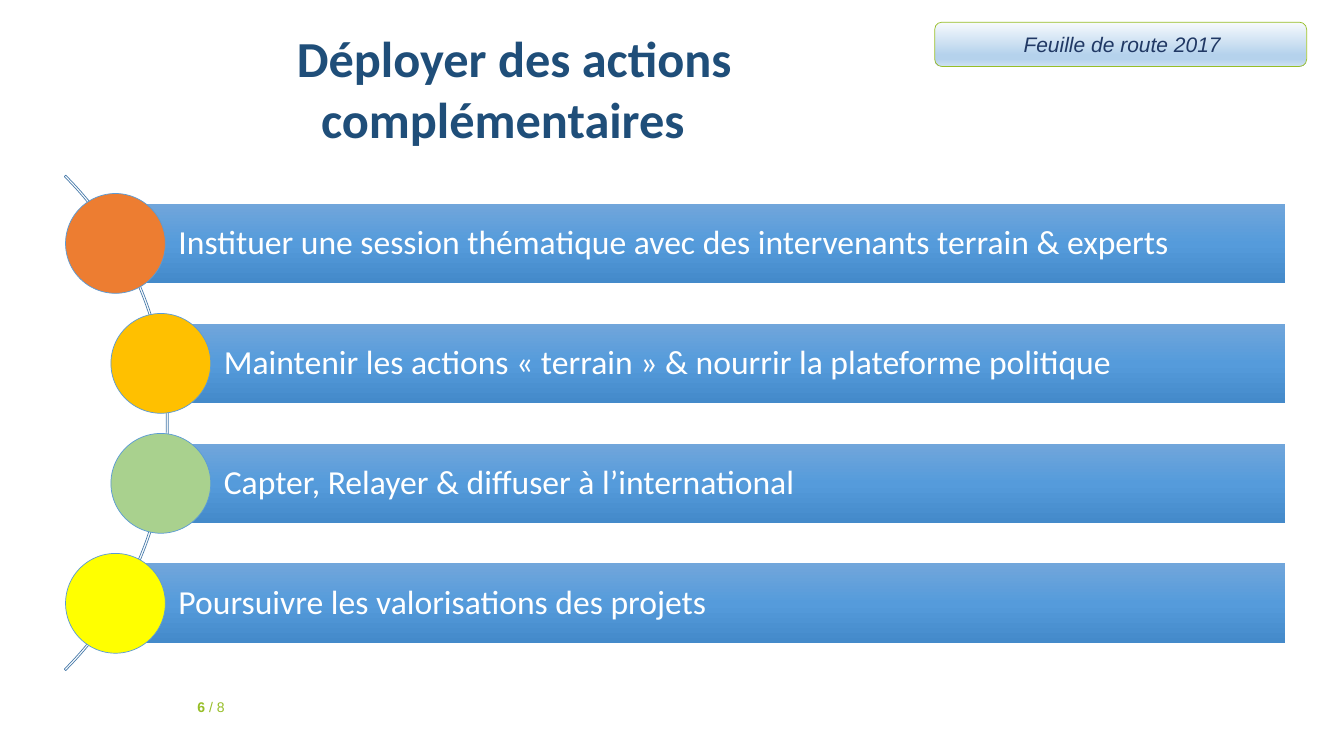
from copy import deepcopy

from pptx import Presentation
from pptx.dml.color import RGBColor
from pptx.enum.shapes import MSO_SHAPE as SHAPE
from pptx.enum.text import MSO_ANCHOR as ANCHOR, MSO_AUTO_SIZE as AUTO, PP_ALIGN as ALIGN
from pptx.util import Pt

PX = 9144  # 100 px to the inch


def rgb(color):
    return RGBColor.from_string(color)


def set_gradient(fill, stops):
    """Fill from top to bottom with (position in percent, colour) stops."""
    fill.gradient()
    fill.gradient_angle = 270
    gs_list = fill._fill._gradFill.gsLst
    while len(gs_list) < len(stops):
        gs_list.append(deepcopy(gs_list[0]))
    for stop, (position, color) in zip(fill.gradient_stops, stops):
        stop.position = position / 100
        stop.color.rgb = rgb(color)


prs = Presentation()
prs.slide_width, prs.slide_height = 1333 * PX, 750 * PX
slide = prs.slides.add_slide(prs.slide_layouts[6])
shapes = slide.shapes

# Page number
tf = shapes.add_textbox(186 * PX, 689 * PX, 71 * PX, 26 * PX).text_frame
tf.word_wrap = True
tf.auto_size = AUTO.SHAPE_TO_FIT_TEXT
tf.margin_top = tf.margin_bottom = 4 * PX
for text, bold in (("6", True), (" / 8", False)):
    r = tf.paragraphs[0].add_run()
    r.text = text
    r.font.name, r.font.size, r.font.bold = "Arial", Pt(10), bold
    r.font.color.rgb = rgb("97BE27")

# Title
tf = shapes.add_textbox(186 * PX, 22 * PX, 637 * PX, 131 * PX).text_frame
tf.word_wrap = True
tf.auto_size = AUTO.SHAPE_TO_FIT_TEXT
p = tf.paragraphs[0]
p.alignment = ALIGN.CENTER
r = p.add_run()
r.text = " Déployer des actions complémentaires "
r.font.name, r.font.size, r.font.bold = "Calibri", Pt(36), True
r.font.color.rgb = rgb("1F4E79")

# Roadmap badge
badge = shapes.add_shape(SHAPE.ROUNDED_RECTANGLE, 927 * PX, 22 * PX, 369 * PX, 44 * PX)
badge.shadow.inherit = False
set_gradient(badge.fill, [(0, "F7FAFD"), (74, "B5D2EC"), (83, "B5D2EC"), (100, "CEE1F2")])
badge.line.color.rgb = rgb("97BE27")
badge.line.width = Pt(0.5)
tf = badge.text_frame
tf.vertical_anchor = ANCHOR.MIDDLE
tf.margin_left = tf.margin_top = tf.margin_bottom = 3 * PX
tf.margin_right = 0
p = tf.paragraphs[0]
p.alignment = ALIGN.CENTER
r = p.add_run()
r.text = "Feuille de route 2017"
r.font.name, r.font.size, r.font.italic = "Arial", Pt(15), True
r.font.color.rgb = rgb("203864")

# Arc behind the list
arc = shapes.add_shape(SHAPE.BLOCK_ARC, -528 * PX, 72 * PX, 695 * PX, 695 * PX)
arc.shadow.inherit = False
arc.adjustments[0] = 189  # from 315 degrees
arc.adjustments[1] = 27  # to 45 degrees
arc.adjustments[2] = 0.003
arc.fill.background()
arc.line.color.rgb = rgb("497CAB")
arc.line.width = Pt(0.5)

# Actions: a bar with a disc centred on its left end
BAR_TOP, BAR_STEP, BAR_RIGHT, BAR_HEIGHT, DISC = 202, 119, 1275, 79, 99
actions = [
    (114, "ED7D31", "Instituer une session thématique avec des intervenants terrain & experts"),
    (159, "FFC000", "Maintenir les actions « terrain » & nourrir la plateforme politique"),
    (159, "A9D18E", "Capter, Relayer & diffuser à l’international"),
    (114, "FFFF00", "Poursuivre les valorisations des projets"),
]
for i, (left, color, text) in enumerate(actions):
    top = BAR_TOP + i * BAR_STEP
    bar = shapes.add_shape(SHAPE.RECTANGLE, left * PX, top * PX,
                           (BAR_RIGHT - left) * PX, BAR_HEIGHT * PX)
    bar.shadow.inherit = False
    set_gradient(bar.fill, [(0, "71A6DB"), (50, "559BDB"), (100, "448ACA")])
    bar.line.fill.background()
    tf = bar.text_frame
    tf.word_wrap = True
    tf.vertical_anchor = ANCHOR.MIDDLE
    tf.margin_left = 63 * PX
    tf.margin_top = tf.margin_right = tf.margin_bottom = 7 * PX
    p = tf.paragraphs[0]
    p.alignment = ALIGN.LEFT
    p.line_spacing = 0.9
    r = p.add_run()
    r.text = text
    r.font.name, r.font.size = "Calibri", Pt(24)
    r.font.color.rgb = rgb("FFFFFF")

    disc = shapes.add_shape(SHAPE.OVAL, (left - DISC // 2) * PX,
                            (top - (DISC - BAR_HEIGHT) // 2) * PX, DISC * PX, DISC * PX)
    disc.shadow.inherit = False
    disc.fill.solid()
    disc.fill.fore_color.rgb = rgb(color)
    disc.line.color.rgb = rgb("5B9BD5")
    disc.line.width = Pt(0.5)

prs.save("out.pptx")
